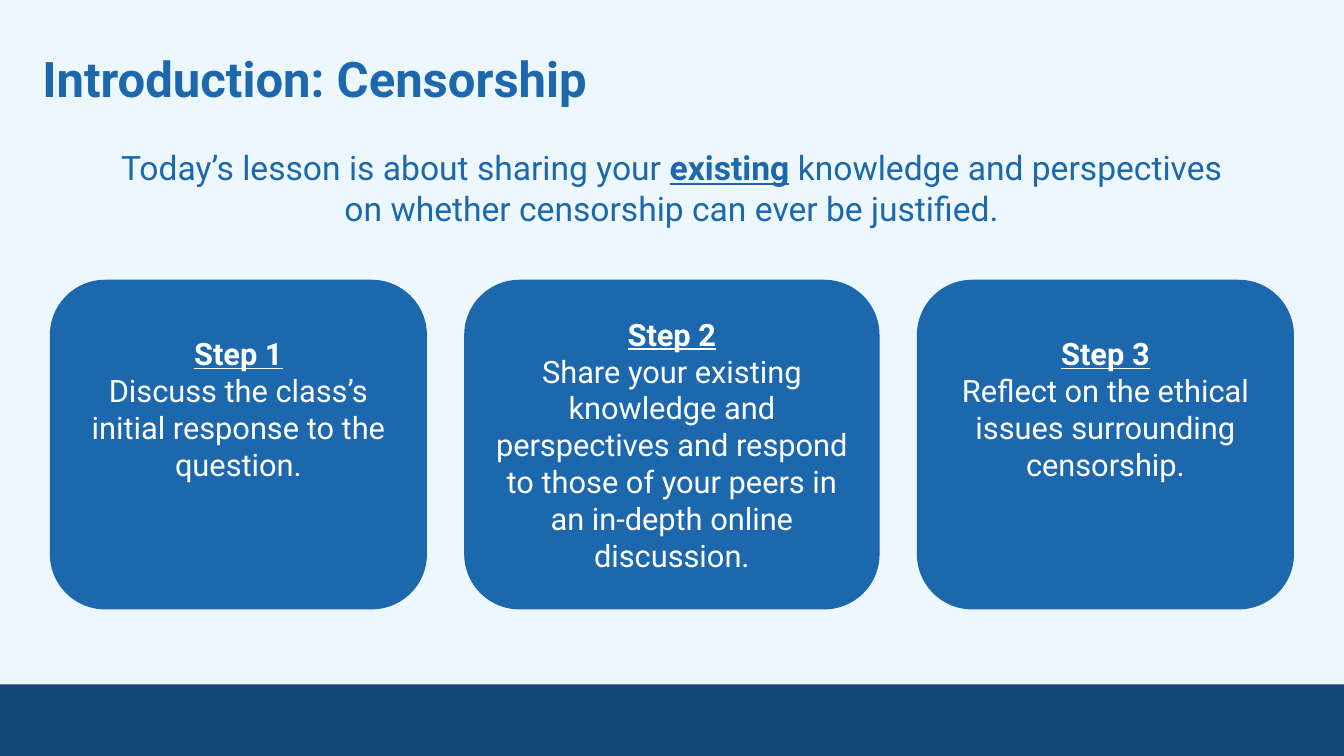
"""Build the censorship introduction slide with its three lesson steps."""
from dataclasses import dataclass

from pptx import Presentation
from pptx import util as u
from pptx.dml import color
from pptx.enum import shapes, text

COLORS = {"sky": "ECF8FE", "blue": "1D67AC", "navy": "144777", "white": "FFFFFF"}
FONT = "Roboto"
WIDTH, HEIGHT = u.Inches(13.33), u.Inches(7.5)
MARGIN, GAP = 3.75, 2.85
CARD_TOP, CARD_HEIGHT = 37.07, 43.47


@dataclass(frozen=True)
class Area:
    """Position and size in percent of the slide."""
    x: float
    y: float
    w: float
    h: float

    def emu(self) -> tuple[int, int, int, int]:
        return (round(self.x * WIDTH / 100), round(self.y * HEIGHT / 100),
                round(self.w * WIDTH / 100), round(self.h * HEIGHT / 100))


@dataclass(frozen=True)
class Step:
    """A numbered card with its width in percent and bottom inset in inches."""
    body: str
    width: float
    bottom: float


STEPS = [
    Step("Discuss the class’s initial response to the question.", 27.98, 0.82),
    Step("Share your existing knowledge and perspectives and respond to those "
         "of your peers in an in-depth online discussion.", 30.83, 0.1),
    Step("Reflect on the ethical issues surrounding censorship.", 27.98, 0.82),
]


def rgb(name: str) -> color.RGBColor:
    return color.RGBColor.from_string(COLORS[name])


def style(p, size: float, name: str, align=text.PP_ALIGN.CENTER) -> None:
    p.alignment = align
    p.font.name, p.font.size = FONT, u.Pt(size)
    p.font.color.rgb = rgb(name)


def set_insets(tf, inset: float) -> None:
    tf.word_wrap = True
    tf.margin_left = tf.margin_right = u.Inches(inset)
    tf.margin_top = tf.margin_bottom = u.Inches(inset)


def add_block(s, kind, area: Area, fill: str):
    sp = s.shapes.add_shape(kind, *area.emu())
    sp.shadow.inherit = False
    sp.fill.solid()
    sp.fill.fore_color.rgb = rgb(fill)
    sp.line.color.rgb = rgb(fill)
    sp.line.width = u.Pt(0.75)
    return sp


def add_text(s, area: Area, inset: float):
    tf = s.shapes.add_textbox(*area.emu()).text_frame
    set_insets(tf, inset)
    return tf.paragraphs[0]


def add_step(s, number: int, step: Step, x: float) -> None:
    area = Area(x, CARD_TOP, step.width, CARD_HEIGHT)
    sp = add_block(s, shapes.MSO_SHAPE.ROUNDED_RECTANGLE, area, "blue")
    sp.adjustments[0] = 1 / 6
    tf = sp.text_frame
    set_insets(tf, 0.1)
    tf.margin_bottom = u.Inches(step.bottom)
    tf.vertical_anchor = text.MSO_ANCHOR.MIDDLE
    heading, body = tf.paragraphs[0], tf.add_paragraph()
    heading.text, body.text = f"Step {number}", step.body
    for p in (heading, body):
        style(p, 22, "white")
    heading.font.bold = heading.font.underline = True


def main() -> None:
    prs = Presentation()
    prs.slide_width, prs.slide_height = WIDTH, HEIGHT
    s = prs.slides.add_slide(prs.slide_layouts[6])
    s.background.fill.solid()
    s.background.fill.fore_color.rgb = rgb("sky")

    footer = add_block(s, shapes.MSO_SHAPE.RECTANGLE, Area(0, 90.53, 100, 9.47), "navy")
    footer.line.fill.background()

    title = add_text(s, Area(2.18, 4.67, 91.45, 11.47), 0.13)
    title.text = "Introduction: Censorship"
    style(title, 35, "blue", text.PP_ALIGN.LEFT)
    title.font.bold = True

    intro = add_text(s, Area(6.83, 18.13, 86.27, 24.27), 0.1)
    intro.add_run().text = "Today’s lesson is about sharing your "
    r = intro.add_run()
    r.text = "existing"
    r.font.bold = r.font.underline = True
    intro.add_run().text = (" knowledge and perspectives on whether censorship "
                            "can ever be justified.")
    style(intro, 24, "blue")

    x = MARGIN
    for number, step in enumerate(STEPS, 1):
        add_step(s, number, step, x)
        x += step.width + GAP

    prs.save("out.pptx")


if __name__ == "__main__":
    main()
